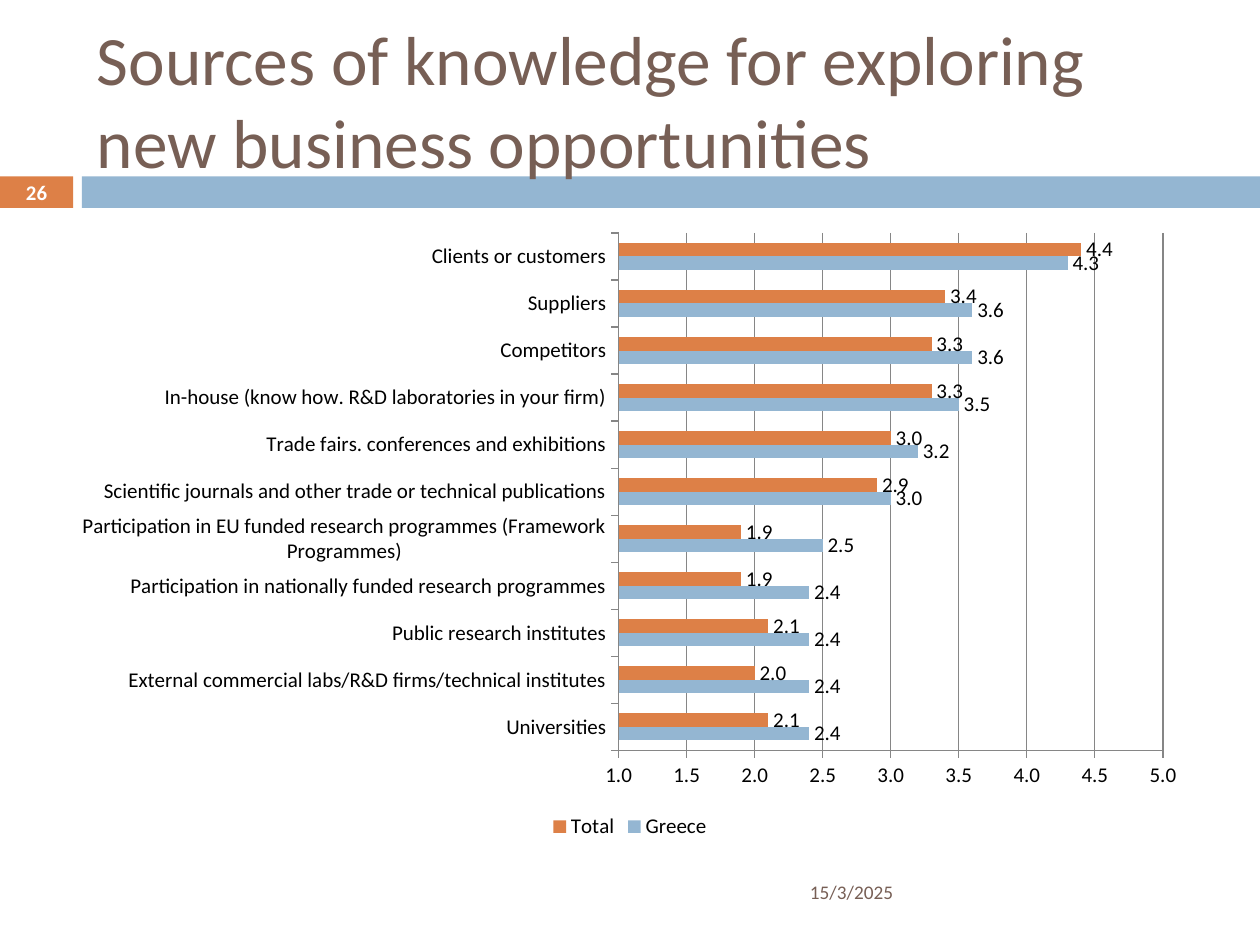
from dataclasses import dataclass

import pptx
import pptx.chart.data
import pptx.dml.color
import pptx.enum.chart
import pptx.enum.shapes
import pptx.enum.text
import pptx.oxml
import pptx.oxml.ns
import pptx.util

Inches = pptx.util.Inches
PP_ALIGN = pptx.enum.text.PP_ALIGN


@dataclass(frozen=True)
class Theme:
    font: str = "Calibri"
    orange: str = "DD8047"
    blue: str = "94B6D2"
    brown: str = "775F55"
    white: str = "FFFFFF"
    black: str = "000000"
    grey: str = "868686"
    title_size: float = 39.6
    number_size: float = 11.9
    date_size: float = 11
    chart_size: float = 12


THEME = Theme()

# Category, Greece, Total; listed from the bottom of the chart upwards
SOURCES = [
    ("Universities", 2.4, 2.1),
    ("External commercial labs/R&D firms/technical institutes", 2.4, 2.0),
    ("Public research institutes", 2.4, 2.1),
    ("Participation in nationally funded research programmes", 2.4, 1.9),
    ("Participation in EU funded research programmes (Framework Programmes)", 2.5, 1.9),
    ("Scientific journals and other trade or technical publications", 3.0, 2.9),
    ("Trade fairs. conferences and exhibitions", 3.2, 3.0),
    ("In-house (know how. R&D laboratories in your firm)", 3.5, 3.3),
    ("Competitors", 3.6, 3.3),
    ("Suppliers", 3.6, 3.4),
    ("Clients or customers", 4.3, 4.4),
]


def rgb(color):
    return pptx.dml.color.RGBColor.from_string(color)


def style_font(font, size, color, bold=False):
    font.name = THEME.font
    font.size = pptx.util.Pt(size)
    font.color.rgb = rgb(color)
    font.bold = bold


def add_bar(slide, left, width, color):
    sp = slide.shapes.add_shape(
        pptx.enum.shapes.MSO_SHAPE.RECTANGLE,
        Inches(left), Inches(1.4), Inches(width), Inches(0.25))
    sp.shadow.inherit = False
    sp.fill.solid()
    sp.fill.fore_color.rgb = rgb(color)
    sp.line.fill.background()


def add_text(slide, box, text, size, color, bold=False, align=PP_ALIGN.LEFT):
    tf = slide.shapes.add_textbox(*map(Inches, box)).text_frame
    tf.word_wrap = True
    tf.vertical_anchor = pptx.enum.text.MSO_ANCHOR.MIDDLE
    tf.text = text
    p = tf.paragraphs[0]
    p.alignment = align
    style_font(p.runs[0].font, size, color, bold)


def set_plot_layout(chart, **fractions):
    """Fix the inner plot area as fractions of the chart frame."""
    plot_area = chart._chartSpace.chart.plotArea
    for old in plot_area.findall(pptx.oxml.ns.qn("c:layout")):
        plot_area.remove(old)
    sizes = "".join(f'<c:{k} val="{v}"/>' for k, v in fractions.items())
    plot_area.insert(0, pptx.oxml.parse_xml(
        f'<c:layout {pptx.oxml.ns.nsdecls("c")}><c:manualLayout>'
        '<c:layoutTarget val="inner"/><c:xMode val="edge"/><c:yMode val="edge"/>'
        f'{sizes}</c:manualLayout></c:layout>'))


def style_axes(chart):
    value_axis = chart.value_axis
    value_axis.minimum_scale = 1
    value_axis.maximum_scale = 5
    value_axis.major_unit = 0.5
    value_axis.has_major_gridlines = True
    value_axis.major_gridlines.format.line.color.rgb = rgb(THEME.grey)
    value_axis.tick_labels.number_format = "0.0"
    value_axis.tick_labels.number_format_is_linked = False
    for axis in (value_axis, chart.category_axis):
        axis.major_tick_mark = pptx.enum.chart.XL_TICK_MARK.OUTSIDE
        axis.format.line.color.rgb = rgb(THEME.grey)


def add_sources_chart(slide):
    categories, greece, total = zip(*SOURCES)
    data = pptx.chart.data.CategoryChartData(number_format="0.0")
    data.categories = categories
    data.add_series("Greece", greece)
    data.add_series("Total", total)
    chart = slide.shapes.add_chart(
        pptx.enum.chart.XL_CHART_TYPE.BAR_CLUSTERED,
        Inches(0.5), Inches(1.75), Inches(9), Inches(4.95), data).chart
    style_font(chart.font, THEME.chart_size, THEME.black)
    chart.has_title = False
    chart.has_legend = True
    chart.legend.position = pptx.enum.chart.XL_LEGEND_POSITION.BOTTOM
    chart.legend.include_in_layout = False
    style_axes(chart)

    plot = chart.plots[0]
    plot.vary_by_categories = False
    plot.gap_width = 150
    plot.overlap = 0
    for series, color in zip(plot.series, (THEME.blue, THEME.orange)):
        series.format.fill.solid()
        series.format.fill.fore_color.rgb = rgb(color)
        labels = series.data_labels
        labels.show_value = True
        labels.number_format = "0.0"
        labels.number_format_is_linked = False
        labels.position = pptx.enum.chart.XL_LABEL_POSITION.OUTSIDE_END
    set_plot_layout(chart, x=0.49, y=0.02, w=0.48, h=0.83)


def add_title(slide, text):
    add_text(slide, (0.67, 0.25, 8.92, 1.08), text, THEME.title_size, THEME.brown)


def main():
    prs = pptx.Presentation()
    prs.slide_width, prs.slide_height = Inches(10), Inches(7.5)
    slide = prs.slides.add_slide(prs.slide_layouts[6])
    add_bar(slide, 0, 0.58, THEME.orange)
    add_bar(slide, 0.65, 9.35, THEME.blue)
    add_title(slide, "Sources of knowledge for exploring new business opportunities")
    add_sources_chart(slide)
    add_text(slide, (0, 1.39, 0.58, 0.27), "26", THEME.number_size, THEME.white,
             bold=True, align=PP_ALIGN.CENTER)
    add_text(slide, (6.33, 6.88, 2.92, 0.4), "15/3/2025", THEME.date_size, THEME.brown)
    prs.save("out.pptx")


if __name__ == "__main__":
    main()
